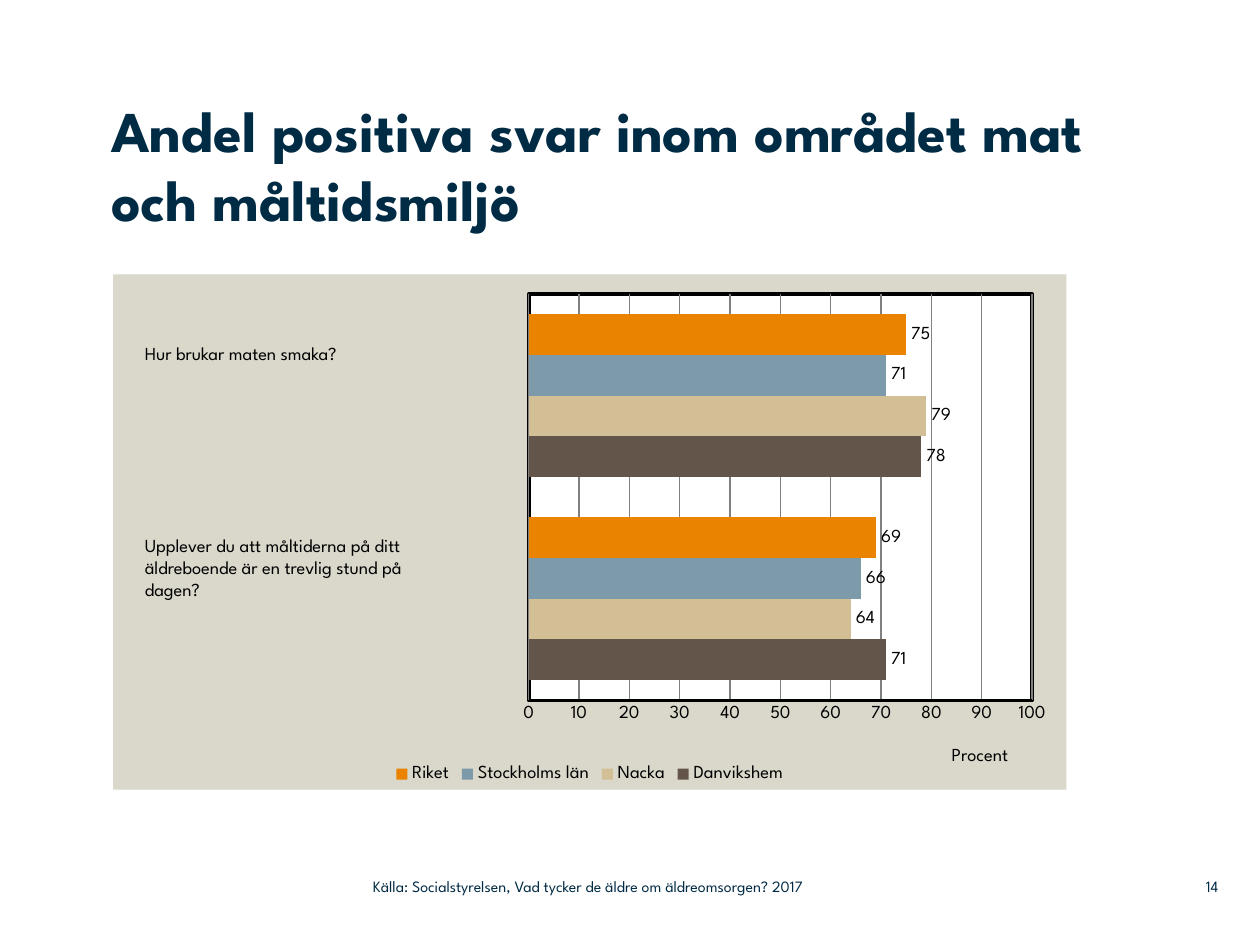
from lxml.etree import SubElement
from pptx import Presentation
from pptx.chart.data import CategoryChartData
from pptx.dml.color import RGBColor
from pptx.enum.chart import XL_CHART_TYPE, XL_LABEL_POSITION, XL_LEGEND_POSITION, XL_TICK_MARK
from pptx.enum.text import MSO_ANCHOR, PP_ALIGN
from pptx.oxml import parse_xml
from pptx.oxml.ns import nsdecls, qn
from pptx.util import Cm, Pt

FONT = "League Spartan"
NAVY, BLACK, WHITE, SAND, GREY = "002B45", "000000", "FFFFFF", "DAD7CB", "808080"
SERIES = [
    ("Danvikshem", (71, 78), "635549"),
    ("Nacka", (64, 79), "D3BF96"),
    ("Stockholms län", (66, 71), "7D9AAA"),
    ("Riket", (69, 75), "E98300"),
]


def color(value):
    return RGBColor.from_string(value)


def style_font(font, size, value, bold=False):
    font.name, font.size, font.bold = FONT, Pt(size), bold
    font.color.rgb = color(value)


def style_line(line, value, width):
    line.color.rgb = color(value)
    line.width = Pt(width)


def fill_properties(fill, line=None, width=0):
    """Return a chart spPr with a solid fill and an optional outline."""
    stroke = f'<a:solidFill><a:srgbClr val="{line}"/></a:solidFill>' if line else "<a:noFill/>"
    return parse_xml(
        f'<c:spPr {nsdecls("c", "a")}><a:solidFill><a:srgbClr val="{fill}"/></a:solidFill>'
        f'<a:ln w="{Pt(width)}">{stroke}</a:ln></c:spPr>'
    )


def set_layout(element, index, inner=False, **fractions):
    """Place a chart part by fractions of the chart's size."""
    for old in element.findall(qn("c:layout")):
        element.remove(old)
    layout = parse_xml(f'<c:layout {nsdecls("c")}><c:manualLayout/></c:layout>')
    manual = layout[0]
    if inner:
        SubElement(manual, qn("c:layoutTarget"), val="inner")
    for name in ("x", "y"):
        SubElement(manual, qn(f"c:{name}Mode"), val="edge")
    for name, value in fractions.items():
        SubElement(manual, qn(f"c:{name}"), val=str(value))
    element.insert(index, layout)


def add_text(page, box, lines, size, value, align=PP_ALIGN.LEFT, flush=False):
    """Add a text box; a flush one has no insets and is centred vertically."""
    frame = page.shapes.add_textbox(*map(Cm, box)).text_frame
    frame.word_wrap = True
    if flush:
        frame.margin_left = frame.margin_top = frame.margin_right = frame.margin_bottom = 0
        frame.vertical_anchor = MSO_ANCHOR.MIDDLE
    frame.text = "\n".join(lines)
    for para in frame.paragraphs:
        para.alignment = align
        style_font(para.runs[0].font, size, value)


def add_title(page, box):
    title = page.shapes.title
    title.left, title.top, title.width, title.height = map(Cm, box)
    frame = title.text_frame
    frame.margin_left = frame.margin_top = frame.margin_right = frame.margin_bottom = 0
    frame.vertical_anchor = MSO_ANCHOR.TOP
    frame.text = "Andel positiva svar inom området mat och måltidsmiljö"
    para = frame.paragraphs[0]
    para.alignment = PP_ALIGN.LEFT
    style_font(para.runs[0].font, 33, NAVY, bold=True)


def style_value_axis(axis):
    axis.minimum_scale, axis.maximum_scale, axis.major_unit = 0, 100, 10
    axis.major_tick_mark = axis.minor_tick_mark = XL_TICK_MARK.NONE
    style_line(axis.format.line, BLACK, 2)
    style_line(axis.major_gridlines.format.line, GREY, 0.75)
    style_font(axis.tick_labels.font, 10.5, BLACK)
    title = axis.axis_title
    title.text_frame.text = "Procent"
    style_font(title.text_frame.paragraphs[0].runs[0].font, 10.5, BLACK)
    set_layout(title.format.element if hasattr(title.format, "element") else title.element,
               1, x=0.876, y=0.91)


def add_bar_chart(page, box):
    data = CategoryChartData()
    data.categories = ["1", "2"]
    for name, values, _ in SERIES:
        data.add_series(name, values)
    chart = page.shapes.add_chart(XL_CHART_TYPE.BAR_CLUSTERED, *map(Cm, box), data).chart
    chart.has_title = False
    style_font(chart.font, 10.5, BLACK)
    chart.category_axis.visible = False
    style_value_axis(chart.value_axis)

    plot = chart.plots[0]
    plot.gap_width, plot.overlap, plot.vary_by_categories = 100, 0, False
    for series, (_, _, value) in zip(plot.series, SERIES):
        series.format.fill.solid()
        series.format.fill.fore_color.rgb = color(value)
        labels = series.data_labels
        labels.show_value = True
        labels.position = XL_LABEL_POSITION.OUTSIDE_END
        style_font(labels.font, 10.5, BLACK)

    chart.has_legend = True
    legend = chart.legend
    legend.position = XL_LEGEND_POSITION.BOTTOM
    legend.include_in_layout = False
    style_font(legend.font, 10.5, BLACK)
    set_layout(chart.element.find(f".//{qn('c:legend')}"), 1, x=0.29, y=0.95, w=0.42, h=0.05)

    area = chart.element.find(f".//{qn('c:plotArea')}")
    set_layout(area, 0, inner=True, x=0.436, y=0.038, w=0.528, h=0.789)
    area.append(fill_properties(WHITE, BLACK, 2))
    chart.element.find(qn("c:chart")).addnext(fill_properties(SAND))


def add_questions(page, left, top):
    add_text(page, (left, top, 7.54, 0.71), ["Hur brukar maten smaka?"], 10.5, BLACK)
    add_text(page, (left, top + 3.86, 7.44, 1.6),
             ["Upplever du att måltiderna på ditt äldreboende är en trevlig stund på", "dagen?"],
             10.5, BLACK)


def add_footer(page, top, height):
    add_text(page, (23.37, top, 1.19, height), ["14"], 9, NAVY, PP_ALIGN.RIGHT, flush=True)
    add_text(page, (7.52, top, 11.25, height),
             ["Källa: Socialstyrelsen, Vad tycker de äldre om äldreomsorgen? 2017"],
             9, NAVY, flush=True)


def main():
    deck = Presentation()
    deck.slide_width, deck.slide_height = Cm(25.4), Cm(19.05)
    page = deck.slides.add_slide(deck.slide_layouts[5])
    add_bar_chart(page, (2.28, 5.53, 19.22, 10.39))
    add_title(page, (2.24, 1.91, 21.39, 3.61))
    add_questions(page, 2.67, 6.78)
    add_footer(page, 17.5, 0.74)
    deck.save("out.pptx")


if __name__ == "__main__":
    main()
